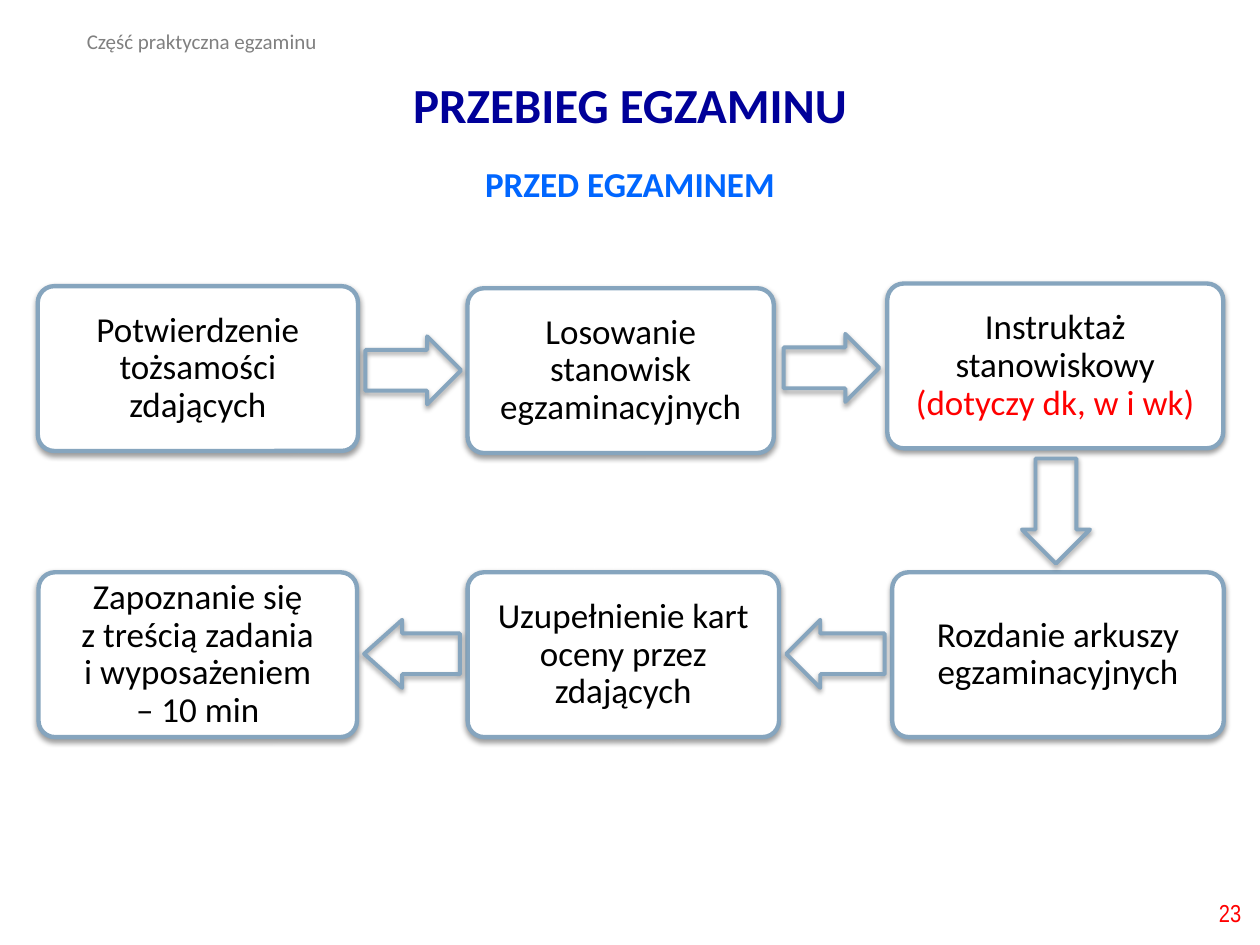
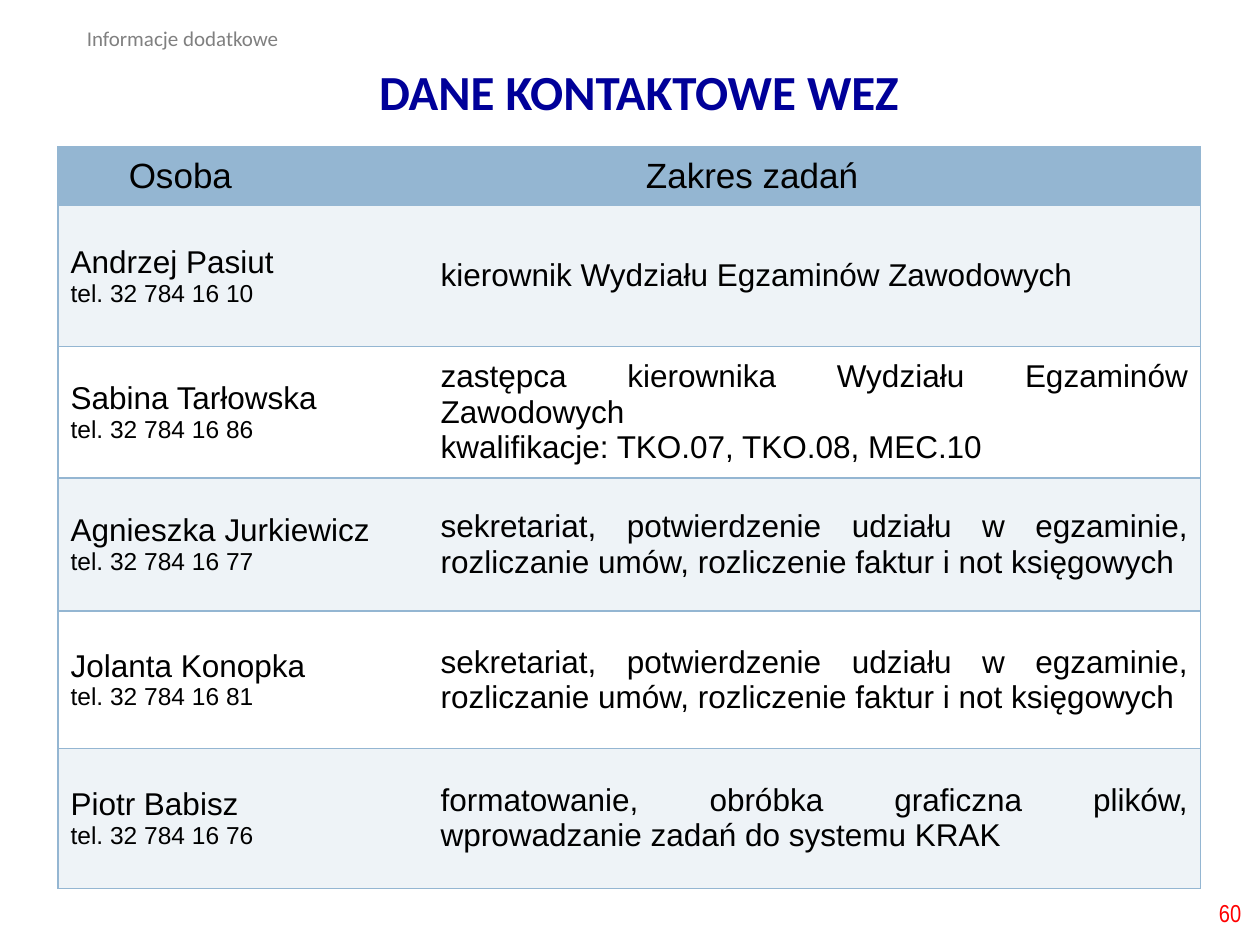
from lxml import etree
from pptx import Presentation
from pptx.dml.color import RGBColor
from pptx.enum.shapes import MSO_SHAPE
from pptx.enum.text import MSO_ANCHOR, PP_ALIGN
from pptx.oxml.ns import qn
from pptx.util import Pt

LEFT, CENTER, RIGHT, JUSTIFY = (
    PP_ALIGN.LEFT, PP_ALIGN.CENTER, PP_ALIGN.RIGHT, PP_ALIGN.JUSTIFY)
TOP, MIDDLE = MSO_ANCHOR.TOP, MSO_ANCHOR.MIDDLE
ROUNDED = MSO_SHAPE.ROUNDED_RECTANGLE
ARROW_RIGHT, ARROW_LEFT, ARROW_DOWN = (
    MSO_SHAPE.RIGHT_ARROW, MSO_SHAPE.LEFT_ARROW, MSO_SHAPE.DOWN_ARROW)

COLORS = {
    "title": "000099", "subtitle": "0066FF", "section": "808080",
    "accent": "FF0000", "text": "000000", "white": "FFFFFF",
    "outline": "86A5BE", "header": "94B6D2", "band": "EEF3F7",
}

TITLE = {"name": "Calibri", "size": 28, "bold": True, "color": "title"}
SUBTITLE = {"name": "Calibri", "size": 20, "bold": True, "color": "subtitle"}
SECTION = {"name": "Calibri", "size": 12, "color": "section"}
NUMBER = {"name": "Arial Narrow", "size": 14, "color": "accent"}
STEP = {"name": "Calibri", "size": 20, "color": "text"}
STEP_NOTE = {**STEP, "color": "accent"}
HEADER = {"name": "Arial", "size": 20, "color": "text"}
BODY = {**HEADER, "size": 18}
PHONE = {**HEADER, "size": 14}

STEP_HEIGHT = 94.2
TOP_ROW, BOTTOM_ROW = 163.5, 327
STEPS = [  # left, top, width, text, note
    (21.6, TOP_ROW, 183, "Potwierdzenie tożsamości zdających", ""),
    (267.2, 164.7, 175, "Losowanie stanowisk egzaminacyjnych", ""),
    (507, 162, 192, "Instruktaż stanowiskowy\n", "(dotyczy dk, w i wk)"),
    (509.8, BOTTOM_ROW, 189.5, "Rozdanie arkuszy egzaminacyjnych", ""),
    (267.2, BOTTOM_ROW, 178, "Uzupełnienie kart oceny przez zdających", ""),
    (22, BOTTOM_ROW, 182,
     "Zapoznanie się\nz treścią zadania\ni wyposażeniem\n– 10 min", ""),
]
ARROW_THICK = 38.9
ARROWS = [  # kind, left, top, width, height, head length ratio
    (ARROW_RIGHT, 208.8, 192.2, 54.7, ARROW_THICK, 0.5),
    (ARROW_RIGHT, 447.8, 190.8, 54.7, ARROW_THICK, 0.5),
    (ARROW_DOWN, 584, 262, ARROW_THICK, 60, 0.5),
    (ARROW_LEFT, 449.3, 354.2, 56.2, ARROW_THICK, 0.5),
    (ARROW_LEFT, 208.1, 354.2, 54.7, ARROW_THICK, 0.56),
]

COLUMNS = [211.5, 441.5]
ROWS = [33.5, 80.5, 75.3, 76, 78.5, 79.9]
HEADINGS = [("Osoba", 40.5), ("Zakres zadań", 124.5)]  # text, left margin
SETTLEMENTS = ("sekretariat, potwierdzenie udziału w egzaminie, "
               "rozliczanie umów, rozliczenie faktur i not księgowych")
CONTACTS = [  # person, phone, duties
    ("Andrzej Pasiut", "tel. 32 784 16 10",
     ["kierownik Wydziału Egzaminów Zawodowych"]),
    ("Sabina Tarłowska", "tel. 32 784 16 86",
     ["zastępca kierownika Wydziału Egzaminów Zawodowych",
      "kwalifikacje: TKO.07, TKO.08, MEC.10"]),
    ("Agnieszka Jurkiewicz", "tel. 32 784 16 77", [SETTLEMENTS]),
    ("Jolanta Konopka", "tel. 32 784 16 81", [SETTLEMENTS]),
    ("Piotr Babisz", "tel. 32 784 16 76",
     ["formatowanie, obróbka graficzna plików, "
      "wprowadzanie zadań do systemu KRAK"]),
]


def rgb(name):
    return RGBColor.from_string(COLORS[name])


def style_font(font, style):
    for key, value in style.items():
        if key == "color":
            font.color.rgb = rgb(value)
        else:
            setattr(font, key, Pt(value) if key == "size" else value)


def write(p, text, style, align=LEFT, spacing=None):
    p.text = text
    p.alignment = align
    p.line_spacing = spacing
    for r in p.runs:
        style_font(r.font, style)


def write_paragraphs(tf, items, align=LEFT):
    """Fill a text frame with (text, style) paragraphs."""
    for i, (text, style) in enumerate(items):
        p = tf.add_paragraph() if i else tf.paragraphs[0]
        write(p, text, style, align)


def add_text(slide, box, text, style, align=LEFT, anchor=MIDDLE, spacing=None):
    tf = slide.shapes.add_textbox(*map(Pt, box)).text_frame
    tf.word_wrap = True
    tf.vertical_anchor = anchor
    write(tf.paragraphs[0], text, style, align, spacing)


def add_slide(prs, title, title_box, section, section_top, number):
    slide = prs.slides.add_slide(prs.slide_layouts[5])
    sp = slide.shapes.title
    sp.left, sp.top, sp.width, sp.height = map(Pt, title_box)
    sp.text_frame.vertical_anchor = MIDDLE
    write(sp.text_frame.paragraphs[0], title, TITLE, CENTER, 0.9)
    add_text(slide, (42.5, section_top, 192, 21.6), section, SECTION, anchor=TOP)
    add_text(slide, (554.4, 507, 162, 28.8), number, NUMBER, RIGHT)
    return slide


def add_outlined(slide, kind, box, line_width):
    """Add a preset shape with the shared outline and soft shadow."""
    sp = slide.shapes.add_shape(kind, *map(Pt, box))
    sp.line.color.rgb = rgb("outline")
    sp.line.width = Pt(line_width)
    etree.SubElement(sp.line._get_or_add_ln(), qn("a:round"))
    sp.shadow.inherit = False
    effects = sp._element.spPr.find(qn("a:effectLst"))
    shadow = etree.SubElement(
        effects, qn("a:outerShdw"), blurRad=str(Pt(3.1)), dist=str(Pt(1.6)),
        dir="5400000", rotWithShape="0")
    color = etree.SubElement(shadow, qn("a:srgbClr"), val=COLORS["text"])
    etree.SubElement(color, qn("a:alpha"), val="38000")
    return sp


def add_step(slide, left, top, width, text, note):
    sp = add_outlined(slide, ROUNDED, (left, top, width, STEP_HEIGHT), 2.5)
    sp.adjustments[0] = 0.1
    sp.fill.solid()
    sp.fill.fore_color.rgb = rgb("white")
    tf = sp.text_frame
    tf.word_wrap = True
    tf.vertical_anchor = MIDDLE
    for side in ("left", "right", "top", "bottom"):
        setattr(tf, f"margin_{side}", Pt(8.64))
    p = tf.paragraphs[0]
    write(p, text, STEP, CENTER, 0.9)
    if note:
        r = p.add_run()
        r.text = note
        style_font(r.font, STEP_NOTE)


def add_arrow(slide, kind, left, top, width, height, head):
    sp = add_outlined(slide, kind, (left, top, width, height), 2.25)
    sp.fill.background()
    sp.adjustments[0] = 0.6
    sp.adjustments[1] = head


def set_borders(cell, hidden):
    """Draw all cell borders except the hidden side."""
    tc_pr = cell._tc.get_or_add_tcPr()
    for side in ("lnL", "lnR", "lnT", "lnB"):
        ln = etree.SubElement(tc_pr, qn(f"a:{side}"), w=str(Pt(1)))
        if side == hidden:
            etree.SubElement(ln, qn("a:noFill"))
        else:
            fill = etree.SubElement(ln, qn("a:solidFill"))
            etree.SubElement(fill, qn("a:srgbClr"), val=COLORS["header"])


def add_contacts(slide):
    table = slide.shapes.add_table(
        len(ROWS), len(COLUMNS), Pt(33.1), Pt(84), Pt(sum(COLUMNS)),
        Pt(sum(ROWS))).table
    table.first_row = table.horz_banding = False
    for column, width in zip(table.columns, COLUMNS):
        column.width = Pt(width)
    for i, height in enumerate(ROWS):
        table.rows[i].height = Pt(height)
        fill = "header" if i == 0 else "band" if i % 2 else "white"
        for cell, hidden in zip(table.rows[i].cells, ("lnR", "lnL")):
            cell.vertical_anchor = MIDDLE
            set_borders(cell, hidden)
            cell.fill.solid()
            cell.fill.fore_color.rgb = rgb(fill)
    for cell, (text, margin) in zip(table.rows[0].cells, HEADINGS):
        cell.margin_left = Pt(margin)
        write_paragraphs(cell.text_frame, [(text, HEADER)])
    for i, (person, phone, duties) in enumerate(CONTACTS, 1):
        write_paragraphs(table.cell(i, 0).text_frame,
                         [(person, BODY), (phone, PHONE)])
        write_paragraphs(table.cell(i, 1).text_frame,
                         [(duty, BODY) for duty in duties], JUSTIFY)


def main():
    prs = Presentation()
    prs.slide_width, prs.slide_height = Pt(720), Pt(540)

    slide = add_slide(prs, "PRZEBIEG EGZAMINU", (49.7, 46, 620.6, 31),
                      "Część praktyczna egzaminu", 13, "23")
    add_text(slide, (49.7, 90.7, 620.6, 31), "PRZED EGZAMINEM", SUBTITLE,
             CENTER, spacing=0.9)
    for step in STEPS:
        add_step(slide, *step)
    for arrow in ARROWS:
        add_arrow(slide, *arrow)

    slide = add_slide(prs, "DANE KONTAKTOWE WEZ", (12.2, 36, 705.6, 36),
                      "Informacje dodatkowe", 10.8, "60")
    add_contacts(slide)
    prs.save("out.pptx")


if __name__ == "__main__":
    main()
